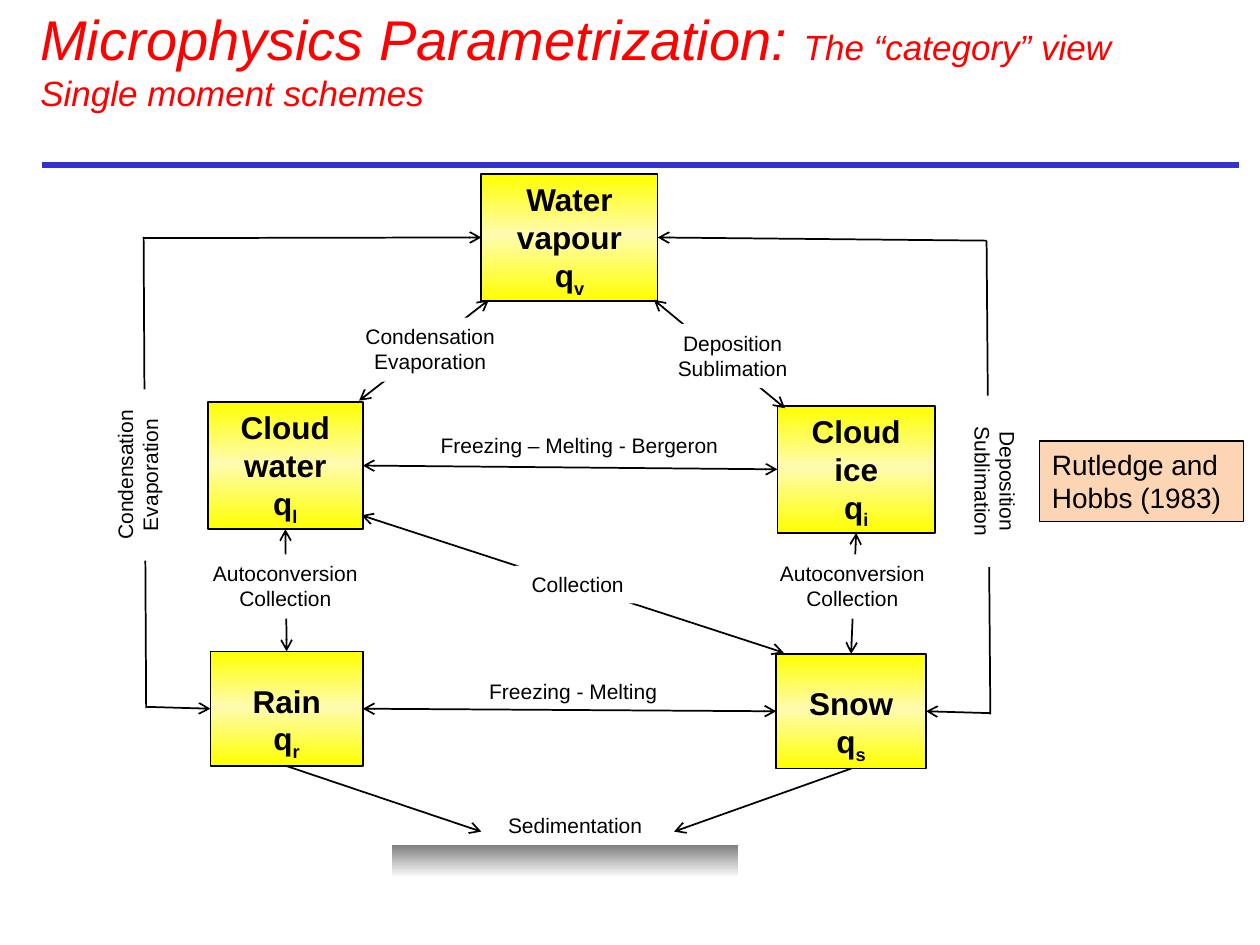
from copy import deepcopy
from lxml import etree
from pptx import Presentation
from pptx.dml.color import RGBColor
from pptx.enum.shapes import MSO_CONNECTOR as CONN, MSO_SHAPE as SHAPE
from pptx.enum.text import MSO_ANCHOR as ANCHOR, PP_ALIGN as ALIGN
from pptx.oxml.ns import qn
from pptx.util import Inches, Pt

COLORS = {"title": "FF0000", "rule": "3333CC", "text": "000000", "edge": "000000",
          "label": "FFFFFF", "note": "FCD5B5"}
BOX_STOPS = [(0, "FFFF00"), (48, "FFFBB0"), (100, "FFFF00")]
GROUND_STOPS = [(0, "808080"), (49, "FFFFFF")]

TITLE = [("Microphysics Parametrization: ", 32), ("The “category” view ", 20),
         ("Single moment schemes", 20)]
BOXES = {
    "ice": ("Cloud ice", "i", 6.17, 3.22, 1.25, 1.01, 0.05),
    "snow": ("Snow", "s", 6.16, 5.19, 1.19, 0.91, 0.24),
    "water": ("Cloud water", "l", 1.65, 3.19, 1.23, 1.01, 0.05),
    "rain": ("Rain", "r", 1.67, 5.17, 1.21, 0.91, 0.24),
    "vapour": ("Water vapour", "v", 3.82, 1.38, 1.4, 1.01, 0.05),
}
TOP, LEFT, BOTTOM, RIGHT = range(4)
BOTH, END, PLAIN = ("headEnd", "tailEnd"), ("tailEnd",), ()
FLOWS = [
    ((2.85, 3.18), (3.88, 2.38), BOTH),
    ((5.19, 2.38), (6.23, 3.24), BOTH),
    (("ice", BOTTOM), ("snow", TOP), BOTH),
    (("water", BOTTOM), ("rain", TOP), BOTH),
    (("rain", RIGHT), ("snow", LEFT), BOTH),
    (("water", RIGHT), ("ice", LEFT), BOTH),
    ((2.87, 4.09), (6.22, 5.18), BOTH),
    (("rain", BOTTOM), (3.82, 6.6), END),
    (("snow", BOTTOM), (5.35, 6.6), END),
    ((1.14, 1.89), ("vapour", LEFT), END),
    ((1.14, 1.88), (1.16, 5.62), PLAIN),
    ((1.16, 5.61), ("rain", LEFT), END),
    ((7.83, 1.91), ("vapour", RIGHT), END),
    ((7.83, 1.91), (7.86, 5.67), PLAIN),
    ((7.86, 5.66), ("snow", RIGHT), END),
]
LABELS = [
    ("Freezing - Melting", 3.15, 5.34, 2.8, 0.3, None, None),
    ("Freezing – Melting - Bergeron", 3.2, 3.38, 2.8, 0.3, None, None),
    ("Autoconversion Collection", 5.88, 4.4, 1.77, 0.51, "label", None),
    ("Autoconversion Collection", 1.38, 4.4, 1.77, 0.51, "label", None),
    ("Deposition Sublimation", 4.93, 2.57, 1.77, 0.51, "label", None),
    ("Condensation Evaporation", 2.53, 2.52, 1.77, 0.51, "label", None),
    ("Collection", 4.09, 4.49, 0.99, 0.3, "label", None),
    ("Condensation Evaporation", 0.84, 3.09, 0.61, 1.36, "label", "vert270"),
    ("Deposition Sublimation", 7.54, 3.14, 0.61, 1.36, "label", "vert"),
    ("Sedimentation", 3.93, 6.4, 1.27, 0.3, "label", None),
]
NOTE = ("Rutledge and Hobbs (1983)", 8.25, 3.5, 1.62, 0.64)
GROUND = (3.11, 6.71, 2.75, 0.52)


def rgb(name):
    return RGBColor.from_string(COLORS[name])


def apply(obj, **values):
    for name, value in values.items():
        setattr(obj, name, value)


def add_run(p, text, size, color="text", **style):
    r = p.add_run()
    r.text = text
    apply(r.font, name="Arial", size=Pt(size), **style)
    r.font.color.rgb = rgb(color)
    return r


def set_line(line, color, width):
    line.color.rgb = rgb(color)
    line.width = Pt(width)


def set_gradient(s, stops):
    s.fill.gradient()
    grad = s._element.spPr.find(qn("a:gradFill"))
    gs_list = grad.find(qn("a:gsLst"))
    for gs in list(gs_list):
        gs_list.remove(gs)
    for pos, color in stops:
        gs = etree.SubElement(gs_list, qn("a:gs"), pos=str(pos * 1000))
        etree.SubElement(gs, qn("a:srgbClr"), val=color)
    grad.find(qn("a:lin")).set("ang", "5400000")


def add_rect(shapes, place, stops):
    s = shapes.add_shape(SHAPE.RECTANGLE, *map(Inches, place))
    s.shadow.inherit = False
    set_gradient(s, stops)
    return s


def add_box(shapes, name, sub, x, y, w, h, top):
    s = add_rect(shapes, (x, y, w, h), BOX_STOPS)
    set_line(s.line, "edge", 1)
    tf = s.text_frame
    apply(tf, word_wrap=True, vertical_anchor=ANCHOR.TOP, margin_top=Inches(top))
    p = tf.paragraphs[0]
    add_run(p, name, 18, bold=True)
    q = tf.add_paragraph()
    add_run(q, "q", 18, bold=True)
    r = add_run(q, sub, 18, bold=True)
    r._r.get_or_add_rPr().set("baseline", "-25000")
    p.alignment = q.alignment = ALIGN.CENTER
    return s


def add_label(shapes, text, x, y, w, h, fill=None, vert=None, size=12, align=ALIGN.CENTER):
    s = shapes.add_textbox(*map(Inches, (x, y, w, h)))
    if fill:
        s.fill.solid()
        s.fill.fore_color.rgb = rgb(fill)
    tf = s.text_frame
    tf.word_wrap = True
    if vert:
        tf._txBody.bodyPr.set("vert", vert)
    p = tf.paragraphs[0]
    p.alignment = align
    add_run(p, text, size)
    return s


def locate(end):
    if end[0] not in BOXES:
        return end
    x, y, w, h = BOXES[end[0]][2:6]
    return [(x + w / 2, y), (x, y + h / 2), (x + w / 2, y + h), (x + w, y + h / 2)][end[1]]


def add_line(shapes, start, end, arrows=PLAIN, color="edge", width=1):
    s = shapes.add_connector(CONN.STRAIGHT, *map(Inches, (*locate(start), *locate(end))))
    set_line(s.line, color, width)
    for arrow in arrows:
        etree.SubElement(s.line._get_or_add_ln(), qn(f"a:{arrow}"), type="arrow")
    etree.SubElement(s._element.spPr, qn("a:effectLst"))
    return s


def add_title(s):
    apply(s, left=Inches(0.22), top=Inches(0.16), width=Inches(9.65), height=Inches(0.62))
    apply(s.text_frame, word_wrap=True, vertical_anchor=ANCHOR.MIDDLE)
    p = s.text_frame.paragraphs[0]
    p.alignment = ALIGN.LEFT
    for i, (text, size) in enumerate(TITLE):
        if i == 2:
            p.add_line_break()
            p._p.find(qn("a:br")).append(deepcopy(r._r.rPr))
        r = add_run(p, text, size, "title", italic=True)


def main():
    prs = Presentation()
    apply(prs, slide_width=Inches(10), slide_height=Inches(7.5))
    slide = prs.slides.add_slide(prs.slide_layouts[5])
    shapes = slide.shapes
    add_title(shapes.title)
    add_line(shapes, (0.33, 1.31), (9.83, 1.31), color="rule", width=3)
    boxes = {key: add_box(shapes, *box) for key, box in BOXES.items()}
    for start, end, arrows in FLOWS:
        s = add_line(shapes, start, end, arrows)
        for point, connect in ((start, s.begin_connect), (end, s.end_connect)):
            if point[0] in boxes:
                connect(boxes[point[0]], point[1])
    add_rect(shapes, GROUND, GROUND_STOPS).line.fill.background()
    for label in LABELS:
        add_label(shapes, *label)
    note = add_label(shapes, *NOTE, fill="note", size=16, align=ALIGN.LEFT)
    set_line(note.line, "edge", 0.75)
    prs.save("out.pptx")


if __name__ == "__main__":
    main()
